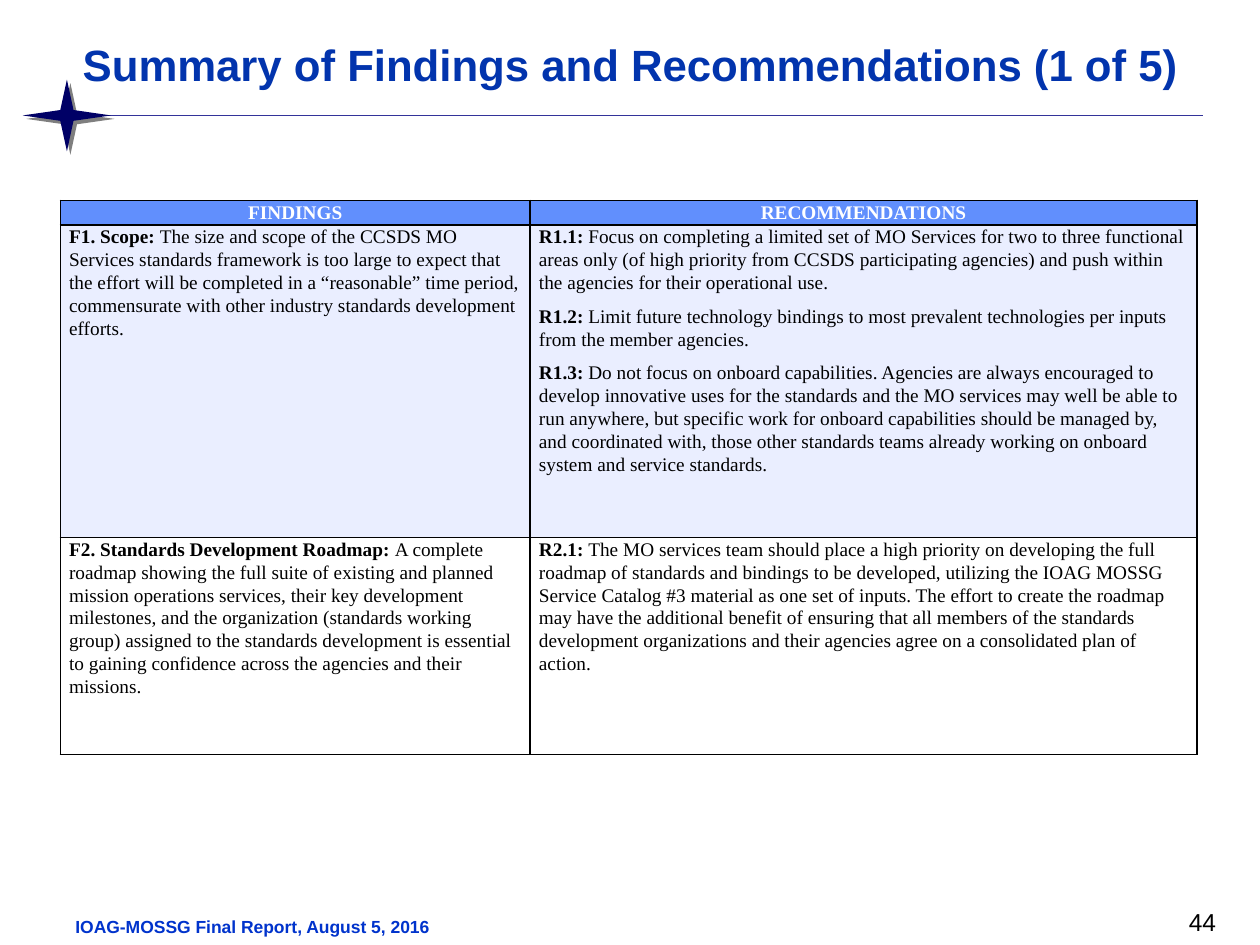
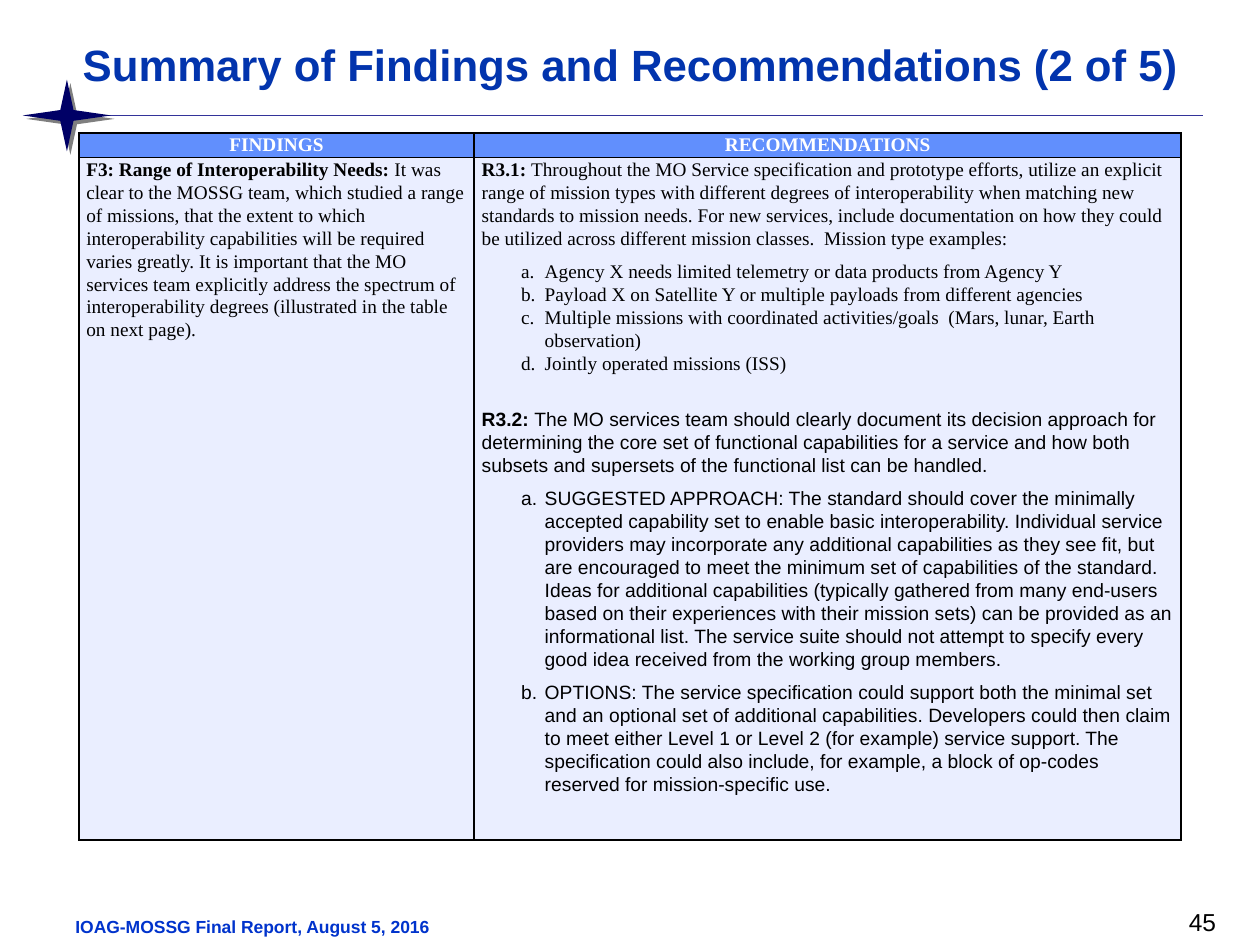
import dataclasses

import lxml.etree
import pptx
import pptx.dml.color
import pptx.enum.shapes
import pptx.enum.text
import pptx.oxml.ns
import pptx.util

Pt = pptx.util.Pt
ALIGN = pptx.enum.text.PP_ALIGN


@dataclasses.dataclass(frozen=True)
class Theme:
    sans: str = "Arial"
    serif: str = "Times New Roman"
    title_color: str = "0234AD"
    footer_color: str = "0033CC"
    text_color: str = "000000"
    header_text: str = "FFFFFF"
    header_fill: str = "618FFD"
    shaded_fill: str = "EAEEFF"
    plain_fill: str = "FFFFFF"
    star_fill: str = "000066"
    rule_color: str = "333399"
    border_color: str = "000000"
    title_size: float = 25
    footer_size: float = 10
    number_size: float = 14
    table_size: float = 11
    table_spacing: float = 1.07


THEME = Theme()
FOOTER = "IOAG-MOSSG Final Report, August 5, 2016"
HEADINGS = ["FINDINGS", "RECOMMENDATIONS"]
HEADER_HEIGHT = 13.5


@dataclasses.dataclass
class Entry:
    text: str
    label: str = ""
    font: str = THEME.serif
    after: float = 6
    level: int = 0
    lettered: bool = False


def rgb(color):
    return pptx.dml.color.RGBColor.from_string(color)


def add_xml(parent, tag, **attributes):
    return lxml.etree.SubElement(parent, pptx.oxml.ns.qn(tag), attributes)


def add_span(para, text, font, size, color, bold=False):
    span = para.add_run()
    span.text = text
    span.font.color.rgb = rgb(color)
    formats = {"name": font, "size": Pt(size), "bold": bold}
    for name, value in formats.items():
        setattr(span.font, name, value)


def format_paragraph(para, **formats):
    for name, value in formats.items():
        setattr(para, name, value)


def add_text(page, area, text, size, color, bold=False, wrap=True, **formats):
    box = page.shapes.add_textbox(*map(Pt, area))
    box.text_frame.word_wrap = wrap
    para = box.text_frame.paragraphs[0]
    format_paragraph(para, **formats)
    add_span(para, text, THEME.sans, size, color, bold)


def add_rule(page):
    rule = page.shapes.add_connector(
        pptx.enum.shapes.MSO_CONNECTOR.STRAIGHT, Pt(38), Pt(66), Pt(687.5), Pt(66))
    rule.line.color.rgb = rgb(THEME.rule_color)
    rule.line.width = Pt(0.13)
    add_xml(rule._element.spPr, "a:effectLst")


def add_star(page):
    star = page.shapes.add_shape(
        pptx.enum.shapes.MSO_SHAPE.STAR_4_POINT, Pt(13), Pt(45.5), Pt(50.5), Pt(41))
    star.adjustments[0] = 0.106
    star.fill.solid()
    star.fill.fore_color.rgb = rgb(THEME.star_fill)
    star.line.fill.background()
    star.shadow.inherit = False
    effects = star._element.spPr.find(pptx.oxml.ns.qn("a:effectLst"))
    shadow = add_xml(effects, "a:outerShdw", blurRad="0", dist=str(Pt(2.8)),
                     dir=str(45 * 60000), algn="ctr", rotWithShape="0")
    color = add_xml(shadow, "a:srgbClr", val=THEME.border_color)
    add_xml(color, "a:alpha", val="50000")


def add_page(deck, title, number):
    page = deck.slides.add_slide(deck.slide_layouts[6])
    add_rule(page)
    add_star(page)
    add_text(page, (36, 520, 219.5, 19.5), FOOTER, THEME.footer_size,
             THEME.footer_color, bold=True, wrap=False)
    add_text(page, (36, 21.5, 648, 44.5), title, THEME.title_size,
             THEME.title_color, bold=True, alignment=ALIGN.CENTER, line_spacing=0.9)
    add_text(page, (534, 515, 168, 18), str(number), THEME.number_size,
             THEME.text_color, alignment=ALIGN.RIGHT)
    return page


def style_cell(cell, fill, inset):
    margins = {"margin_left": inset, "margin_right": inset,
               "margin_top": 0, "margin_bottom": 0}
    for name, value in margins.items():
        setattr(cell, name, Pt(value))
    properties = cell._tc.get_or_add_tcPr()
    for side in ("a:lnL", "a:lnR", "a:lnT", "a:lnB"):
        border = add_xml(properties, side, w=str(Pt(1)))
        paint = add_xml(border, "a:solidFill")
        add_xml(paint, "a:srgbClr", val=THEME.border_color)
    cell.fill.solid()
    cell.fill.fore_color.rgb = rgb(fill)


def indent_entry(para, lettered):
    properties = para._p.get_or_add_pPr()
    properties.set("marL", str(Pt(36 if lettered else 0)))
    properties.set("indent", str(Pt(-13.5 if lettered else 0)))
    if lettered:
        add_xml(properties, "a:buAutoNum", type="alphaLcPeriod")
    else:
        add_xml(properties, "a:buNone")


def fill_cell(cell, entries):
    for index, entry in enumerate(entries):
        frame = cell.text_frame
        para = frame.add_paragraph() if index else frame.paragraphs[0]
        format_paragraph(para, line_spacing=THEME.table_spacing,
                         space_after=Pt(entry.after), level=entry.level)
        indent_entry(para, entry.lettered)
        style = entry.font, THEME.table_size, THEME.text_color
        if entry.label:
            add_span(para, entry.label + " ", *style, bold=True)
        add_span(para, entry.text, *style)


def add_findings_table(page, left, top, widths, heights, inset, rows):
    heights = [HEADER_HEIGHT, *heights]
    table = page.shapes.add_table(
        len(heights), len(widths), Pt(left), Pt(top),
        Pt(sum(widths)), Pt(sum(heights))).table
    table.first_row = table.horz_banding = False
    for column, width in zip(table.columns, widths):
        column.width = Pt(width)
    for row, height in zip(table.rows, heights):
        row.height = Pt(height)
    for cell, heading in zip(table.rows[0].cells, HEADINGS):
        style_cell(cell, THEME.header_fill, inset)
        para = cell.text_frame.paragraphs[0]
        format_paragraph(para, alignment=ALIGN.CENTER, line_spacing=THEME.table_spacing)
        add_span(para, heading, THEME.serif, THEME.table_size, THEME.header_text, True)
    for index, entries_by_column in enumerate(rows):
        fill = THEME.plain_fill if index % 2 else THEME.shaded_fill
        for cell, entries in zip(table.rows[index + 1].cells, entries_by_column):
            style_cell(cell, fill, inset)
            fill_cell(cell, entries)


SCOPE_AND_ROADMAP = [
    ([Entry("The size and scope of the CCSDS MO Services standards framework is too large "
            "to expect that the effort will be completed in a “reasonable” time period, "
            "commensurate with other industry standards development efforts.",
            "F1. Scope:", after=0)],
     [Entry("Focus on completing a limited set of MO Services for two to three functional "
            "areas only (of high priority from CCSDS participating agencies) and push "
            "within the agencies for their operational use.", "R1.1:"),
      Entry("Limit future technology bindings to most prevalent technologies per inputs "
            "from the member agencies.", "R1.2:"),
      Entry("Do not focus on onboard capabilities. Agencies are always encouraged to "
            "develop innovative uses for the standards and the MO services may well be "
            "able to run anywhere, but specific work for onboard capabilities should be "
            "managed by, and coordinated with, those other standards teams already "
            "working on onboard system and service standards.", "R1.3:")]),
    ([Entry("A complete roadmap showing the full suite of existing and planned mission "
            "operations services, their key development milestones, and the organization "
            "(standards working group) assigned to the standards development is essential "
            "to gaining confidence across the agencies and their missions.",
            "F2. Standards Development Roadmap:", after=0)],
     [Entry("The MO services team should place a high priority on developing the full "
            "roadmap of standards and bindings to be developed, utilizing the IOAG MOSSG "
            "Service Catalog #3 material as one set of inputs. The effort to create the "
            "roadmap may have the additional benefit of ensuring that all members of the "
            "standards development organizations and their agencies agree on a "
            "consolidated plan of action.", "R2.1:")]),
]

INTEROPERABILITY = [
    ([Entry("It was clear to the MOSSG team, which studied a range of missions, that the "
            "extent to which interoperability capabilities will be required varies "
            "greatly. It is important that the MO services team explicitly address the "
            "spectrum of interoperability degrees (illustrated in the table on next "
            "page).", "F3: Range of Interoperability Needs:", after=0)],
     [Entry("Throughout the MO Service specification and prototype efforts, utilize an "
            "explicit range of mission types with different degrees of interoperability "
            "when matching new standards to mission needs. For new services, include "
            "documentation on how they could be utilized across different mission "
            "classes.  Mission type examples:", "R3.1:"),
      Entry("Agency X needs limited telemetry or data products from Agency Y",
            after=0, lettered=True),
      Entry("Payload X on Satellite Y or multiple payloads from different agencies",
            after=0, lettered=True),
      Entry("Multiple missions with coordinated activities/goals  (Mars, lunar, Earth "
            "observation)", after=0, lettered=True),
      Entry("Jointly operated missions (ISS)", after=19, lettered=True),
      Entry("The MO services team should clearly document its decision approach for "
            "determining the core set of functional capabilities for a service and how "
            "both subsets and supersets of the functional list can be handled.",
            "R3.2:", font=THEME.sans, level=1),
      Entry("SUGGESTED APPROACH: The standard should cover the minimally accepted "
            "capability set to enable basic interoperability. Individual service "
            "providers may incorporate any additional capabilities as they see fit, but "
            "are encouraged to meet the minimum set of capabilities of the standard. "
            "Ideas for additional capabilities (typically gathered from many end-users "
            "based on their experiences with their mission sets) can be provided as an "
            "informational list. The service suite should not attempt to specify every "
            "good idea received from the working group members.",
            font=THEME.sans, level=1, lettered=True),
      Entry("OPTIONS: The service specification could support both the minimal set and "
            "an optional set of additional capabilities. Developers could then claim to "
            "meet either Level 1 or Level 2 (for example) service support. The "
            "specification could also include, for example, a block of op-codes reserved "
            "for mission-specific use.", font=THEME.sans, level=1, lettered=True)]),
]


def main():
    deck = pptx.Presentation()
    deck.slide_width, deck.slide_height = Pt(720), Pt(540)
    tables = [
        (34.5, 114.5, (268.5, 381), (178.5, 124), 5, SCOPE_AND_ROADMAP),
        (45, 76, (226, 404), (385,), 4.3, INTEROPERABILITY),
    ]
    for part, table in enumerate(tables, start=1):
        title = f"Summary of Findings and Recommendations ({part} of 5)"
        page = add_page(deck, title, 43 + part)
        add_findings_table(page, *table)
    deck.save("out.pptx")


if __name__ == "__main__":
    main()
